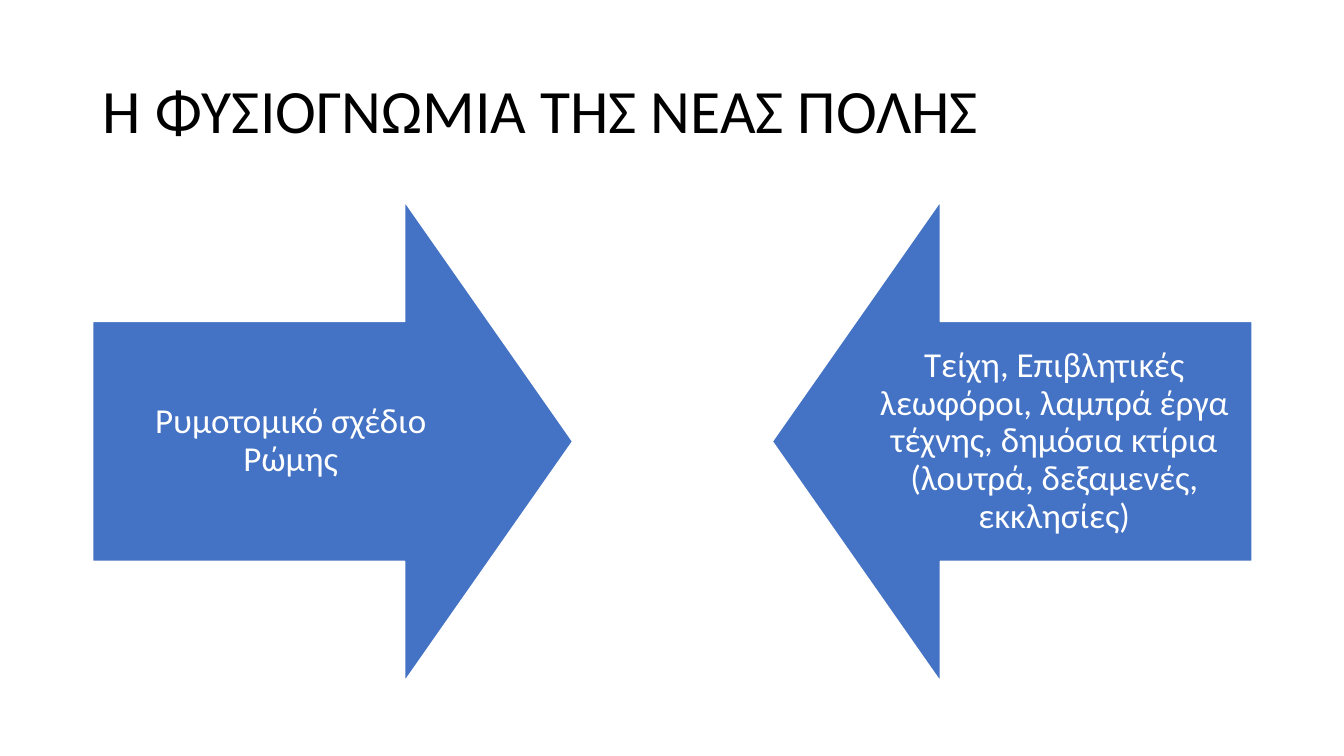
from dataclasses import dataclass

from pptx import Presentation
from pptx.dml.color import RGBColor
from pptx.enum import shapes, text
from pptx.util import Inches, Pt


@dataclass(frozen=True)
class Theme:
    font: str = "Calibri"
    ink: RGBColor = RGBColor(0x00, 0x00, 0x00)
    paper: RGBColor = RGBColor(0xFF, 0xFF, 0xFF)
    accent: RGBColor = RGBColor(0x44, 0x72, 0xC4)
    title_size: int = 44
    arrow_size: int = 25
    line_spacing: float = 0.9


class SlideBuilder:
    def __init__(self, slide, theme):
        self.slide = slide
        self.theme = theme

    def set_words(self, frame, words, size, color, align):
        frame.text = words
        frame.word_wrap = True
        frame.auto_size = text.MSO_AUTO_SIZE.NONE
        frame.vertical_anchor = text.MSO_ANCHOR.MIDDLE
        paragraph = frame.paragraphs[0]
        paragraph.alignment = align
        paragraph.line_spacing = self.theme.line_spacing
        paragraph.font.name = self.theme.font
        paragraph.font.size = Pt(size)
        paragraph.font.color.rgb = color

    def title(self, words, left, top, width, height):
        heading = self.slide.shapes.title
        heading.left, heading.top = Inches(left), Inches(top)
        heading.width, heading.height = Inches(width), Inches(height)
        self.set_words(heading.text_frame, words, self.theme.title_size,
                       self.theme.ink, text.PP_ALIGN.LEFT)

    def arrow(self, preset, words, left, top, side, inset=0.19):
        arrow = self.slide.shapes.add_shape(
            preset, Inches(left), Inches(top), Inches(side), Inches(side))
        arrow.adjustments[0] = 0.5
        arrow.adjustments[1] = 0.35
        arrow.shadow.inherit = False
        arrow.fill.solid()
        arrow.fill.fore_color.rgb = self.theme.accent
        arrow.line.color.rgb = self.theme.paper
        arrow.line.width = Pt(1)
        frame = arrow.text_frame
        frame.margin_left = frame.margin_right = Inches(inset)
        frame.margin_top = frame.margin_bottom = Inches(inset)
        self.set_words(frame, words, self.theme.arrow_size,
                       self.theme.paper, text.PP_ALIGN.CENTER)


def main():
    deck = Presentation()
    deck.slide_width, deck.slide_height = Inches(13.33), Inches(7.5)
    title_only = deck.slide_layouts[5]
    builder = SlideBuilder(deck.slides.add_slide(title_only), Theme())

    # Title
    margin, content_width = 0.92, 11.5
    builder.title("Η ΦΥΣΙΟΓΝΩΜΙΑ ΤΗΣ ΝΕΑΣ ΠΟΛΗΣ", margin, 0.4, content_width, 1.45)

    # Two arrows facing each other, at the edges of the content area
    arrow_top, arrow_side = 2, 4.76
    builder.arrow(shapes.MSO_SHAPE.RIGHT_ARROW, "Ρυμοτομικό σχέδιο Ρώμης",
                  margin, arrow_top, arrow_side)
    builder.arrow(shapes.MSO_SHAPE.LEFT_ARROW,
                  "Τείχη, Επιβλητικές λεωφόροι, λαμπρά έργα τέχνης, "
                  "δημόσια κτίρια (λουτρά, δεξαμενές, εκκλησίες)",
                  margin + content_width - arrow_side, arrow_top, arrow_side)

    deck.save("out.pptx")


if __name__ == "__main__":
    main()
